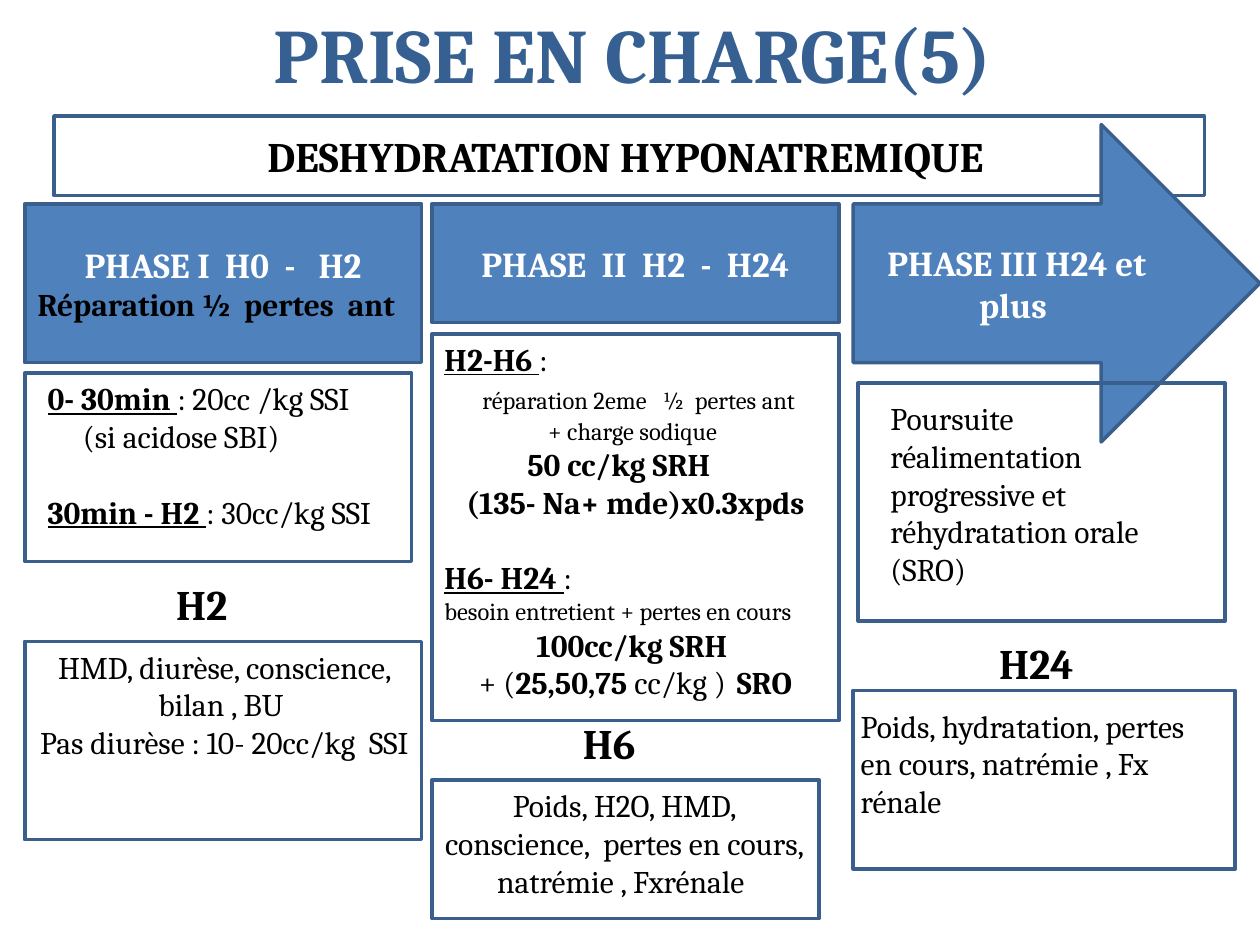
from lxml.etree import SubElement
from pptx import Presentation
from pptx.dml.color import RGBColor
from pptx.enum.shapes import MSO_SHAPE
from pptx.enum.text import MSO_ANCHOR, PP_ALIGN
from pptx.oxml.ns import qn
from pptx.util import Cm, Pt

BLUE, EDGE, TITLE = "4F81BD", "3A5F8C", "376092"
BLACK, WHITE = "000000", "FFFFFF"
LEFT, MID, RIGHT = 0.5, 8.71, 17.2
HEAD = 4.11
GAP = 21.6


def color(code):
    return RGBColor.from_string(code)


def para(*runs, size=18, bold=False, tone=BLACK, center=False, indent=0, before=0):
    """Describe a paragraph; a run is a string or (text, marks[, size]), marks b or u."""
    return dict(runs=runs, size=size, bold=bold, tone=tone,
                center=center, indent=indent, before=before)


class Deck:
    """Holds the style and the current slide."""

    font = "Cambria"

    def __init__(self):
        self.prs = Presentation()
        self.prs.slide_width, self.prs.slide_height = Cm(25.4), Cm(19.05)
        self.slide = self.prs.slides.add_slide(self.prs.slide_layouts[5])

    def fill_text(self, frame, paras):
        frame.word_wrap = True
        for i, item in enumerate(paras):
            p = frame.add_paragraph() if i else frame.paragraphs[0]
            p.alignment = PP_ALIGN.CENTER if item["center"] else PP_ALIGN.LEFT
            p.space_before = Pt(item["before"])
            if item["indent"]:
                p._p.get_or_add_pPr().set("marL", str(Cm(item["indent"])))
            p.font.name, p.font.size = self.font, Pt(item["size"])
            p.font.bold = item["bold"]
            p.font.color.rgb = color(item["tone"])
            for part in item["runs"]:
                text, marks, *size = (part, "") if isinstance(part, str) else part
                run = p.add_run()
                run.text = text
                if "b" in marks:
                    run.font.bold = True
                if "u" in marks:
                    run.font.underline = True
                if size:
                    run.font.size = Pt(size[0])

    def title(self, text, x, y, w, h):
        box = self.slide.shapes.title
        box.left, box.top, box.width, box.height = map(Cm, (x, y, w, h))
        box.text_frame.vertical_anchor = MSO_ANCHOR.TOP
        self.fill_text(box.text_frame,
                       [para(text, size=44, bold=True, tone=TITLE, center=True)])
        self.glow(box.text_frame.paragraphs[0].runs[0])

    def glow(self, run):
        """Cast a soft text shadow down and to the left."""
        props = run._r.get_or_add_rPr()
        effects = SubElement(props, qn("a:effectLst"))
        shade = SubElement(effects, qn("a:outerShdw"), blurRad="60000",
                           dist="290000", dir="9000000", algn="tl")
        tint = SubElement(shade, qn("a:srgbClr"), val=BLACK)
        SubElement(tint, qn("a:alpha"), val="30000")

    def shape(self, x, y, w, h, fill=None, paras=(), kind=MSO_SHAPE.RECTANGLE):
        box = self.slide.shapes.add_shape(kind, *map(Cm, (x, y, w, h)))
        box.shadow.inherit = False
        if fill:
            box.fill.solid()
            box.fill.fore_color.rgb = color(fill)
        else:
            box.fill.background()
        box.line.color.rgb = color(EDGE)
        box.line.width = Pt(2)
        box.text_frame.vertical_anchor = MSO_ANCHOR.MIDDLE
        self.fill_text(box.text_frame, paras)

    def text(self, x, y, w, h, *paras):
        box = self.slide.shapes.add_textbox(*map(Cm, (x, y, w, h)))
        self.fill_text(box.text_frame, paras)
        return box

    def label(self, text, x, y, w):
        box = self.text(x, y, w, 1.27, para(text, size=24, bold=True))
        box.text_frame.word_wrap = False


def phase(text):
    return para(text, size=20, bold=True, tone=WHITE, center=True)


def main():
    deck = Deck()
    deck.title("PRISE EN CHARGE(5) ", 1.5, 0, 22.86, 3.18)
    deck.shape(1.09, 2.34, 23.19, 1.6, WHITE, [
        para("DESHYDRATATION HYPONATREMIQUE", (" ", "", 20),
             size=24, bold=True, center=True)])

    # Phase headings
    deck.shape(RIGHT, 2.51, 8.2, 6.4, BLUE, [phase("PHASE III H24 et plus ")],
               MSO_SHAPE.RIGHT_ARROW)
    deck.shape(MID, HEAD, 8.2, 2.39, BLUE, [phase("PHASE  II  H2  -  H24")])
    deck.shape(LEFT, HEAD, 8, 3.2, BLUE, [
        phase("PHASE I  H0  -   H2"),
        para("Réparation ½  pertes  ant  ", bold=True, center=True)])

    # Frames: treatment, then monitoring
    for area in ((LEFT, 7.52, 7.8, 3.8), (MID, 6.73, 8.2, 7.8),
                 (17.3, 7.72, 7.4, 4.8), (LEFT, 12.93, 8, 4),
                 (MID, 15.72, 7.8, 2.8), (RIGHT, 13.92, 7.7, 3.6)):
        deck.shape(*area)

    # Treatment
    deck.text(0.71, 7.52, 7.6, 3.33,
              para(("0- 30min ", "bu"), ": 20cc /kg SSI"),
              para("(si acidose SBI)", indent=0.71),
              para(("30min - H2 ", "bu"), ": 30cc/kg SSI", before=GAP))
    deck.text(MID, 6.73, 8.2, 7.62,
              para(("H2-H6", "bu"), (" ", "u"), ":"),
              para(" ", ("réparation 2eme   ½  pertes ant", "", 14), center=True),
              para("+ charge sodique ", size=14, center=True),
              para("50 cc/kg SRH", bold=True, indent=1.67),
              para("(135- Na+ mde)x0.3xpds", bold=True, center=True),
              para(("H6- H24 ", "bu"), ":", before=GAP),
              para("besoin entretient + pertes en cours", size=14),
              para("100cc/kg SRH ", bold=True, center=True),
              para("+ (", ("25,50,75", "b"), " cc/kg )", ("  ", "", 14),
                   ("SRO", "b"), center=True))
    deck.text(17.7, 7.92, 6.96, 4.11,
              para("Poursuite réalimentation progressive et "
                   "réhydratation orale (SRO)"))

    # Monitoring
    deck.label("H2", 3.3, 11.53, 1.65)
    deck.label("H6", 11.5, 14.33, 1.65)
    deck.label("H24", 19.89, 12.73, 2.08)
    deck.text(LEFT, 12.93, 8.05, 3.33,
              para("HMD, diurèse, conscience, bilan , BU ", center=True),
              para("Pas diurèse : 10- 20cc/kg  SSI ", center=True))
    deck.text(MID, 15.72, 7.75, 2.57,
              para("Poids, H2O, HMD, conscience,  pertes en cours, "
                   "natrémie , Fxrénale ", center=True))
    deck.text(17.1, 14.12, 7.75, 2.57,
              para("Poids, hydratation, pertes en cours, natrémie , Fx rénale"))

    deck.prs.save("out.pptx")


if __name__ == "__main__":
    main()
